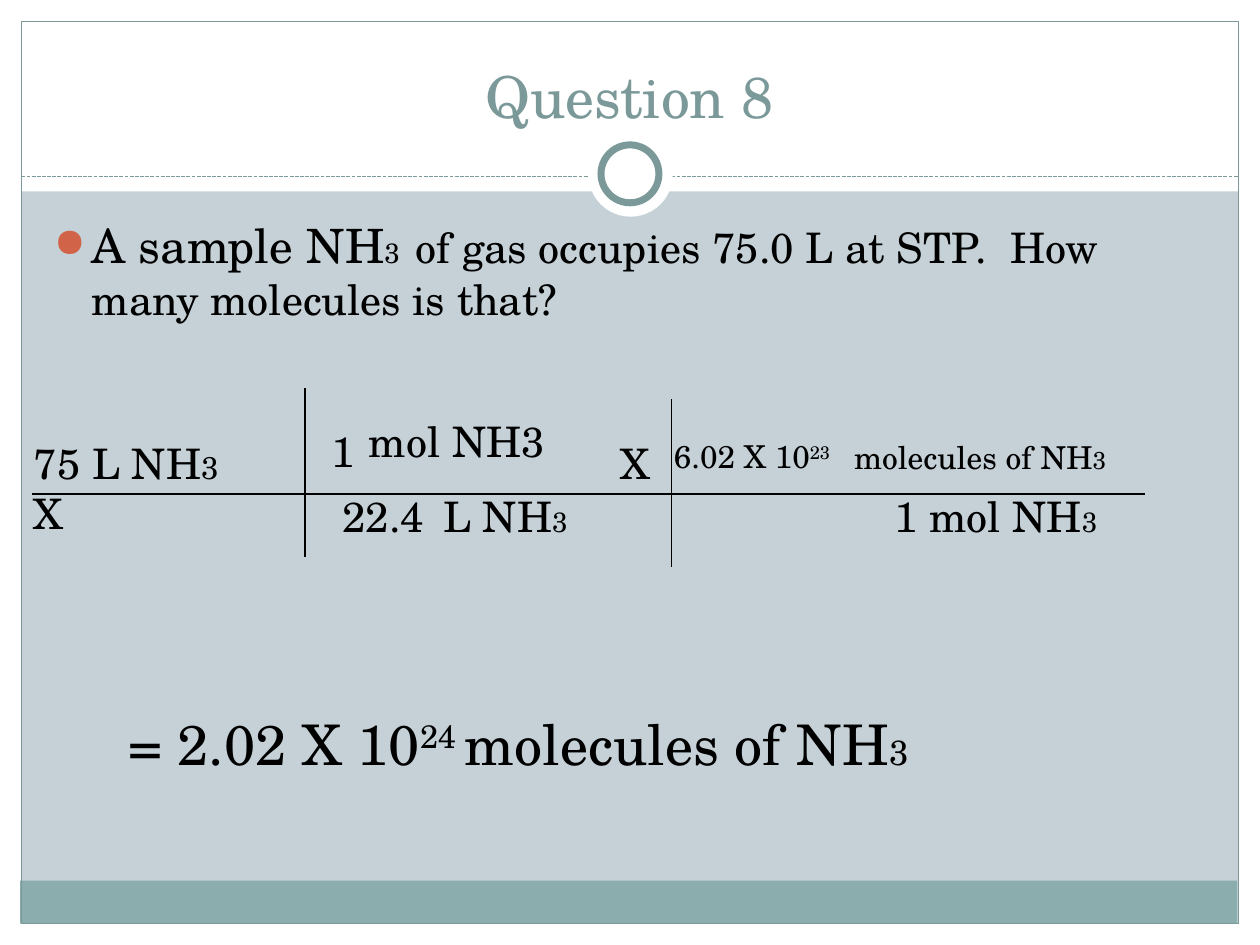
import pptx
import pptx.util
import pptx.dml.color
import pptx.enum.dml
import pptx.enum.shapes
import pptx.enum.text
import lxml.etree
from pptx.util import Inches

RGB = pptx.dml.color.RGBColor
WHITE = RGB(0xFF, 0xFF, 0xFF)
BLACK = RGB(0, 0, 0)
BACK = RGB(0xC5, 0xD1, 0xD7)
BAND = RGB(0x8C, 0xAD, 0xAE)
TEAL = RGB(0x7C, 0x99, 0x9A)
DOT = "D16349"
FONT = "TeX Gyre Schola"
KIND = pptx.enum.shapes.MSO_SHAPE
ALIGN = pptx.enum.text.PP_ALIGN
ANCHOR = pptx.enum.text.MSO_ANCHOR


def add_shape(slide, box, fill=None, line=None, width=0.75, kind=KIND.RECTANGLE):
    shape = slide.shapes.add_shape(kind, *map(Inches, box))
    shape.shadow.inherit = False
    if fill is None:
        shape.fill.background()
    else:
        shape.fill.solid()
        shape.fill.fore_color.rgb = fill
    if line is None:
        shape.line.fill.background()
    else:
        shape.line.color.rgb = line
        shape.line.width = pptx.util.Pt(width)


def add_line(slide, start, end, color=BLACK, dash=None):
    line = slide.shapes.add_connector(
        pptx.enum.shapes.MSO_CONNECTOR.STRAIGHT, *map(Inches, start + end))
    line.line.color.rgb = color
    line.line.width = pptx.util.Pt(0.75)
    if dash is not None:
        line.line.dash_style = dash
    props = line._element.spPr
    lxml.etree.SubElement(props, pptx.oxml.ns.qn("a:effectLst"))


def add_bullet(para):
    props = para._p.get_or_add_pPr()
    props.set("marL", str(Inches(0.3)))
    props.set("indent", str(Inches(-0.3)))
    qn = pptx.oxml.ns.qn
    color = lxml.etree.SubElement(props, qn("a:buClr"))
    lxml.etree.SubElement(color, qn("a:srgbClr")).set("val", DOT)
    lxml.etree.SubElement(props, qn("a:buSzPct")).set("val", "85000")
    lxml.etree.SubElement(props, qn("a:buChar")).set("char", "●")


def add_text(slide, box, *paras, color=BLACK, align=ALIGN.LEFT,
             anchor=ANCHOR.TOP, bullet=False, before=0):
    frame = slide.shapes.add_textbox(*map(Inches, box)).text_frame
    frame.word_wrap = True
    frame.vertical_anchor = anchor
    for i, runs in enumerate(paras):
        para = frame.add_paragraph() if i else frame.paragraphs[0]
        para.alignment = align
        para.space_before = pptx.util.Pt(before)
        if bullet:
            add_bullet(para)
        for text, size, *raised in runs:
            run = para.add_run()
            run.text = text
            run.font.size = pptx.util.Pt(size)
            run.font.name = FONT
            run.font.color.rgb = color
            if raised:
                run._r.get_or_add_rPr().set("baseline", "30000")


def add_frame(slide):
    for box in ((0, 7.33, 10, 0.17), (0, 0, 10, 1.52),
                (0, 0, 0.17, 7.5), (9.83, 0, 0.17, 7.5)):
        add_shape(slide, box, fill=WHITE)
    add_shape(slide, (0.16, 6.99, 9.66, 0.34), fill=BAND)
    add_shape(slide, (0.17, 0.17, 9.66, 7.16), line=TEAL)
    add_line(slide, (0.17, 1.4), (9.83, 1.4), TEAL,
             pptx.enum.dml.MSO_LINE.SQUARE_DOT)
    add_shape(slide, (4.67, 1.05, 0.67, 0.67), fill=WHITE, kind=KIND.OVAL)
    add_shape(slide, (4.77, 1.15, 0.46, 0.46), fill=WHITE, line=TEAL,
              width=4, kind=KIND.OVAL)


def add_factors(slide):
    add_text(slide, (0.17, 3.42, 2.17, 0.5),
             [("75 L NH", 24), ("3", 18)], [("X", 24)])
    for box, *runs in (
        ((3.42, 3.84, 1.25, 0.5), ("L NH", 24), ("3", 16)),
        ((2.62, 3.84, 0.99, 0.5), ("22.4", 24)),
        ((2.83, 3.25, 1.66, 0.5), ("mol NH3", 24)),
        ((2.53, 3.33, 0.62, 0.5), ("1", 24)),
        ((4.83, 3.42, 0.5, 0.5), ("X", 24)),
        ((7, 3.84, 1.92, 0.5), ("1 mol NH", 24), ("3", 16)),
        ((6.68, 3.43, 2.92, 0.4), ("molecules of NH", 18), ("3", 14)),
        ((5.25, 3.42, 1.67, 0.4), ("6.02 X 10", 18), ("23", 18, True)),
    ):
        add_text(slide, box, runs)
    add_line(slide, (0.25, 3.92), (9.09, 3.92))
    add_line(slide, (2.42, 4.42), (2.42, 3.08))
    add_line(slide, (5.33, 4.5), (5.33, 3.17))


def main():
    deck = pptx.Presentation()
    deck.slide_width, deck.slide_height = Inches(10), Inches(7.5)
    slide = deck.slides.add_slide(deck.slide_layouts[6])
    slide.background.fill.solid()
    slide.background.fill.fore_color.rgb = BACK
    add_frame(slide)
    add_text(slide, (0.33, 0.25, 9.33, 0.83), [("Question 8", 33)],
             color=TEAL, align=ALIGN.CENTER, anchor=ANCHOR.BOTTOM)
    add_text(slide, (0.33, 1.67, 9.3, 5),
             [("A sample NH", 27), ("3  ", 16),
              ("of gas occupies 75.0 L at STP.  How many molecules is that?", 24)],
             bullet=True, before=5)
    add_factors(slide)
    add_text(slide, (0.92, 5.58, 6.92, 0.64),
             [("= 2.02 X 10", 32), ("24 ", 32, True),
              ("molecules of NH", 32), ("3", 20)])
    deck.save("out.pptx")


if __name__ == "__main__":
    main()
